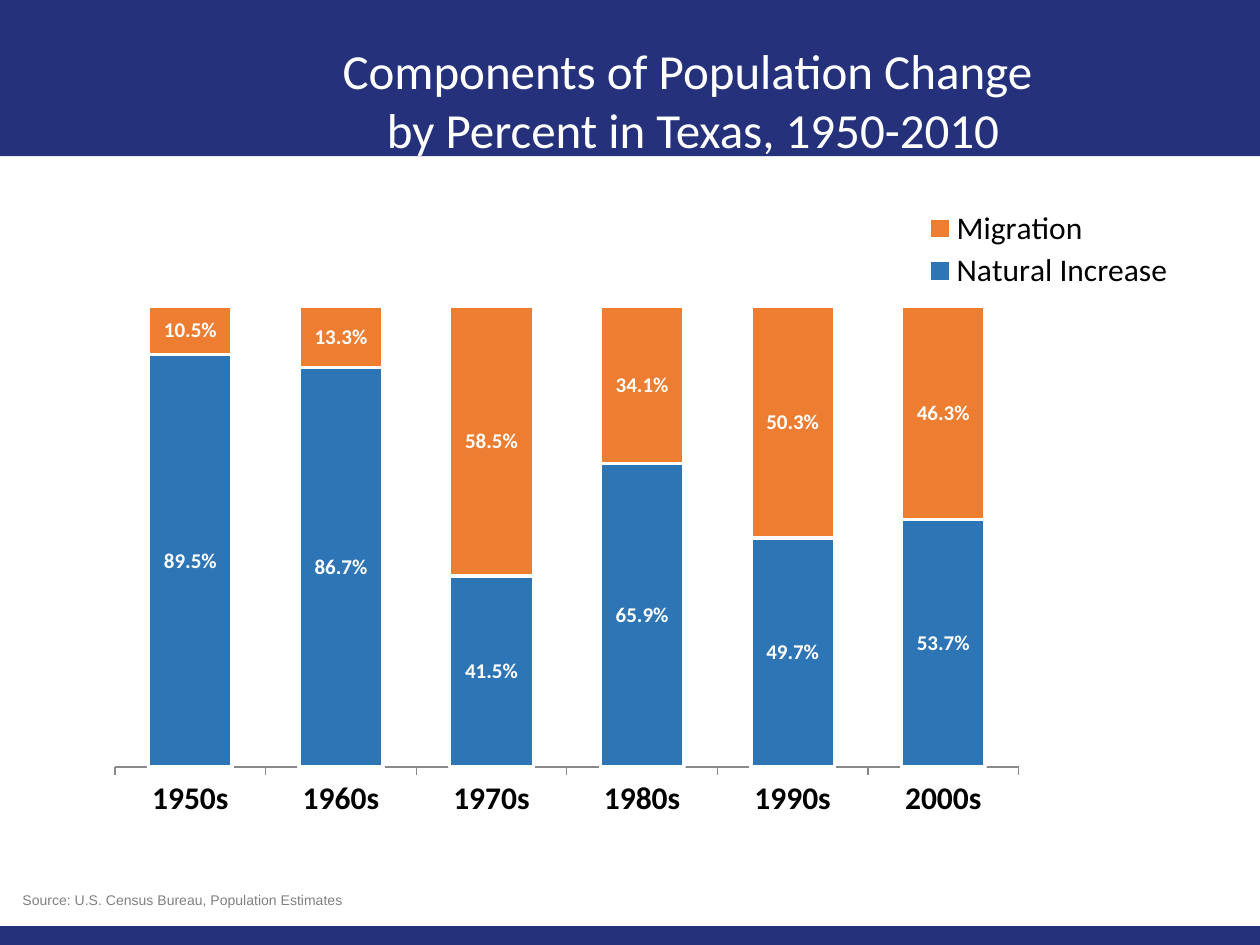
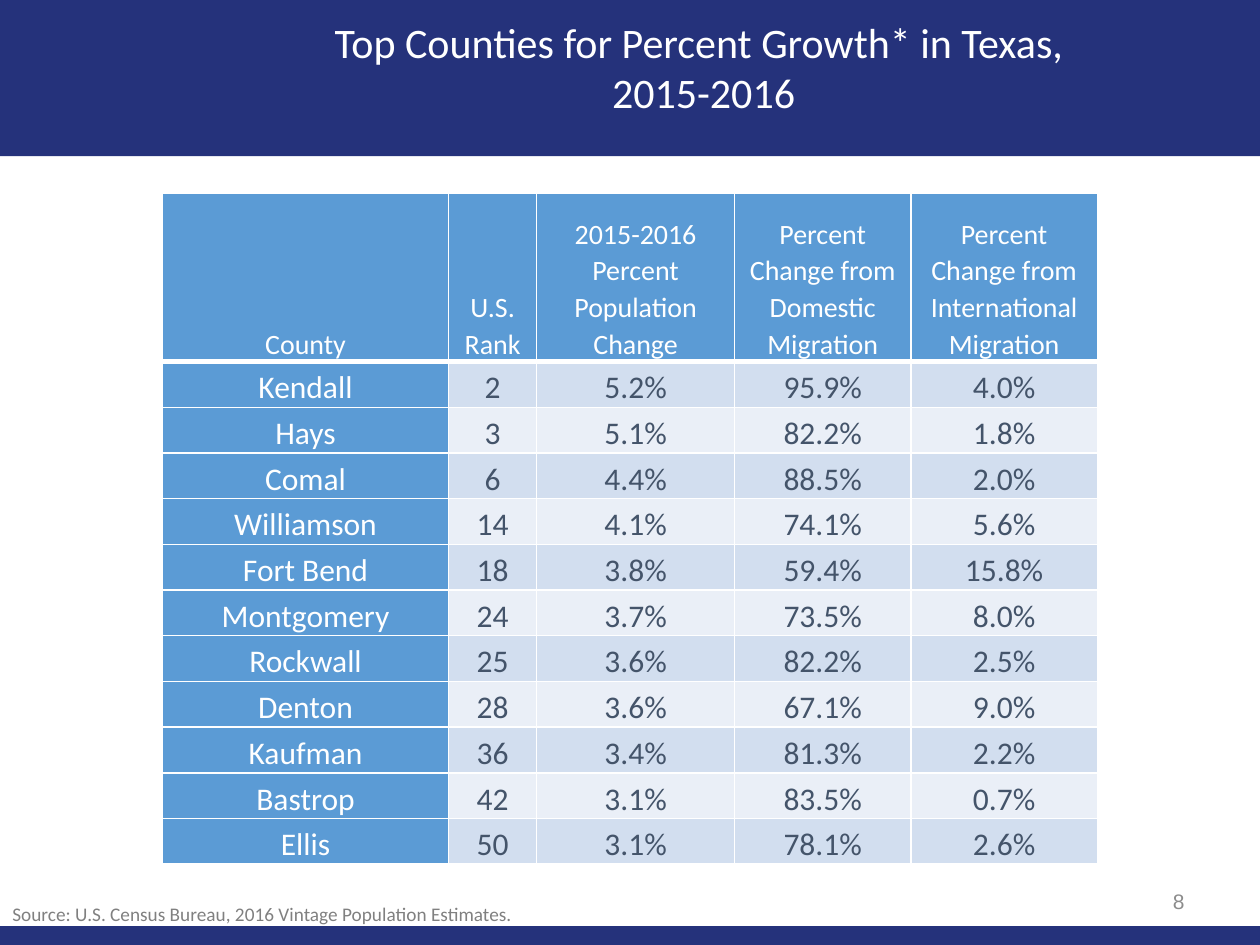
"""Build two slides on population change in Texas."""
from lxml.etree import SubElement
from pptx import Presentation
from pptx.chart.data import CategoryChartData
from pptx.dml.color import RGBColor
from pptx.enum.chart import XL_CHART_TYPE, XL_LEGEND_POSITION, XL_TICK_LABEL_POSITION, XL_TICK_MARK
from pptx.enum.shapes import MSO_SHAPE
from pptx.enum.text import MSO_ANCHOR, PP_ALIGN
from pptx.oxml import parse_xml
from pptx.oxml.ns import nsdecls, qn
from pptx.util import Inches, Pt

NAVY, WHITE, BLACK = "25327B", "FFFFFF", "000000"
GRAY, PAGE_GRAY, AXIS_GRAY = "808080", "8C8C8C", "898989"
HEADER_BLUE, BODY_TEXT = "5B9BD5", "44546A"
ROW_FILLS = ["D2DEEF", "EAEFF7"]
FONT = "Calibri"
BANDS = [(0, 1.24), (7.35, 0.15)]

CHANGE_TITLE = "Components of Population Change \nby Percent in Texas, 1950-2010"
CHANGE_SOURCE = "Source: U.S. Census Bureau, Population Estimates"
DECADES = ["1950s", "1960s", "1970s", "1980s", "1990s", "2000s"]
COMPONENTS = [
    ("Natural Increase", "2E75B6", [0.895, 0.867, 0.415, 0.659, 0.497, 0.537]),
    ("Migration", "ED7D31", [0.105, 0.133, 0.585, 0.341, 0.503, 0.463]),
]
PLOT_LAYOUT = {"x": 0.02, "y": 0.17, "w": 0.74, "h": 0.73}
LEGEND_LAYOUT = {"x": 0.68, "y": 0.01, "w": 0.21, "h": 0.14}

COUNTY_TITLE = "Top Counties for Percent Growth* in Texas, \n2015-2016"
COUNTY_SOURCE = "Source: U.S. Census Bureau, 2016 Vintage Population Estimates."
HEADINGS = [
    "County",
    "U.S. Rank",
    "2015-2016 Percent Population Change",
    "Percent Change from Domestic Migration",
    "Percent Change from International\nMigration",
]
COUNTIES = [
    ("Kendall", "2", "5.2%", "95.9%", "4.0%"),
    ("Hays", "3", "5.1%", "82.2%", "1.8%"),
    ("Comal", "6", "4.4%", "88.5%", "2.0%"),
    ("Williamson", "14", "4.1%", "74.1%", "5.6%"),
    ("Fort Bend", "18", "3.8%", "59.4%", "15.8%"),
    ("Montgomery", "24", "3.7%", "73.5%", "8.0%"),
    ("Rockwall", "25", "3.6%", "82.2%", "2.5%"),
    ("Denton", "28", "3.6%", "67.1%", "9.0%"),
    ("Kaufman", "36", "3.4%", "81.3%", "2.2%"),
    ("Bastrop", "42", "3.1%", "83.5%", "0.7%"),
    ("Ellis", "50", "3.1%", "78.1%", "2.6%"),
]
COLUMN_WIDTHS = [2.27, 0.7, 1.57, 1.4, 1.48]
TABLE_HEIGHT, HEADER_HEIGHT = 5.33, 1.34


def paint(target, color):
    target.solid()
    target.fore_color.rgb = RGBColor.from_string(color)


def style_font(font, size, color, bold=False, name=FONT):
    font.name, font.size, font.bold = name, Pt(size), bold
    font.color.rgb = RGBColor.from_string(color)


def write(frame, text, size, color, align, name=FONT, spacing=None):
    frame.text = text
    for paragraph in frame.paragraphs:
        paragraph.alignment = align
        if spacing:
            paragraph.line_spacing = spacing
        for span in paragraph.runs:
            style_font(span.font, size, color, name=name)


def add_text(page, area, text, size, color, align=PP_ALIGN.LEFT,
             anchor=MSO_ANCHOR.TOP, name=FONT, wrap=True):
    box = page.shapes.add_textbox(*map(Inches, area))
    box.text_frame.word_wrap = wrap
    box.text_frame.vertical_anchor = anchor
    write(box.text_frame, text, size, color, align, name)


def add_page(deck):
    page = deck.slides.add_slide(deck.slide_layouts[6])
    for top, height in BANDS:
        band = page.shapes.add_shape(MSO_SHAPE.RECTANGLE, 0, Inches(top), deck.slide_width, Inches(height))
        band.shadow.inherit = False
        paint(band.fill, NAVY)
        band.line.fill.background()
    return page


def set_layout(parent, index, places, inner=False):
    for old in parent.findall(qn("c:layout")):
        parent.remove(old)
    target = '<c:layoutTarget val="inner"/>' if inner else ""
    modes = "".join(f'<c:{key}Mode val="edge"/>' for key in "xy")
    values = "".join(f'<c:{key} val="{value}"/>' for key, value in places.items())
    parent.insert(index, parse_xml(
        f'<c:layout {nsdecls("c")}><c:manualLayout>{target}{modes}{values}</c:manualLayout></c:layout>'))


def add_components_chart(page):
    data = CategoryChartData(number_format="0.0%")
    data.categories = DECADES
    for name, _, values in COMPONENTS:
        data.add_series(name, values)
    area = map(Inches, (0.72, 1.58, 9.69, 5.01))
    chart = page.shapes.add_chart(XL_CHART_TYPE.COLUMN_STACKED, *area, data).chart
    chart.has_title = False
    style_font(chart.font, 18, BLACK)

    plot = chart.plots[0]
    plot.gap_width, plot.overlap, plot.vary_by_categories = 80, 100, False
    for series, (_, color, _) in zip(plot.series, COMPONENTS):
        paint(series.format.fill, color)
        paint(series.format.line.fill, WHITE)
        series.format.line.width = Pt(2)
        labels = series.data_labels
        labels.show_value = True
        labels.number_format, labels.number_format_is_linked = "0.0%", False
        style_font(labels.font, 12, WHITE, bold=True)

    decades = chart.category_axis
    decades.major_tick_mark = XL_TICK_MARK.OUTSIDE
    decades.tick_label_position = XL_TICK_LABEL_POSITION.LOW
    style_font(decades.tick_labels.font, 18, BLACK, bold=True)
    paint(decades.format.line.fill, AXIS_GRAY)
    shares = chart.value_axis
    shares.minimum_scale, shares.maximum_scale = 0, 1
    shares.has_major_gridlines = False
    shares.visible = False

    chart.has_legend = True
    chart.legend.position = XL_LEGEND_POSITION.RIGHT
    chart.legend.include_in_layout = False
    style_font(chart.legend.font, 18, BLACK)
    set_layout(chart.element.find(".//" + qn("c:plotArea")), 0, PLOT_LAYOUT, inner=True)
    set_layout(chart.element.find(".//" + qn("c:legend")), 1, LEGEND_LAYOUT)


def add_borders(cell, top, bottom):
    properties = cell._tc.get_or_add_tcPr()
    for side, width in (("L", 1), ("R", 1), ("T", top), ("B", bottom)):
        line = SubElement(properties, qn("a:ln" + side), w=str(Pt(width)))
        SubElement(SubElement(line, qn("a:solidFill")), qn("a:srgbClr"), val=WHITE)


def add_county_table(page):
    rows = [HEADINGS, *COUNTIES]
    area = map(Inches, (1.29, 1.53, sum(COLUMN_WIDTHS), TABLE_HEIGHT))
    table = page.shapes.add_table(len(rows), len(HEADINGS), *area).table
    for column, width in zip(table.columns, COLUMN_WIDTHS):
        column.width = Inches(width)
    for index, row in enumerate(table.rows):
        header = index == 0
        row.height = Inches(HEADER_HEIGHT if header else (TABLE_HEIGHT - HEADER_HEIGHT) / len(COUNTIES))
        for position, (cell, text) in enumerate(zip(row.cells, rows[index])):
            blue = header or position == 0
            cell.margin_left = cell.margin_right = Inches(0.07 if header else 0.01)
            cell.margin_top = cell.margin_bottom = 0
            cell.vertical_anchor = MSO_ANCHOR.BOTTOM
            add_borders(cell, 3 if index == 1 else 1, 3 if header else 1)
            paint(cell.fill, HEADER_BLUE if blue else ROW_FILLS[(index - 1) % 2])
            write(cell.text_frame, text, 16 if header else 18, WHITE if blue else BODY_TEXT,
                  PP_ALIGN.CENTER, spacing=1.07 if header else None)


def main():
    deck = Presentation()
    deck.slide_width, deck.slide_height = Inches(10), Inches(7.5)

    page = add_page(deck)
    add_components_chart(page)
    add_text(page, (1.75, 0.25, 7.5, 1.08), CHANGE_TITLE, 28, WHITE, PP_ALIGN.CENTER, MSO_ANCHOR.MIDDLE)
    add_text(page, (0.08, 7.03, 5, 0.24), CHANGE_SOURCE, 8, GRAY, name="Arial")

    page = add_page(deck)
    add_text(page, (1.92, 0.08, 7.33, 0.91), COUNTY_TITLE, 24, WHITE, PP_ALIGN.CENTER)
    add_text(page, (7.17, 6.95, 2.33, 0.4), "8", 12, PAGE_GRAY, PP_ALIGN.RIGHT, MSO_ANCHOR.MIDDLE, "Arial")
    add_text(page, (0, 7.11, 4.24, 0.29), COUNTY_SOURCE, 11, GRAY, wrap=False)
    add_county_table(page)

    deck.save("out.pptx")


if __name__ == "__main__":
    main()
